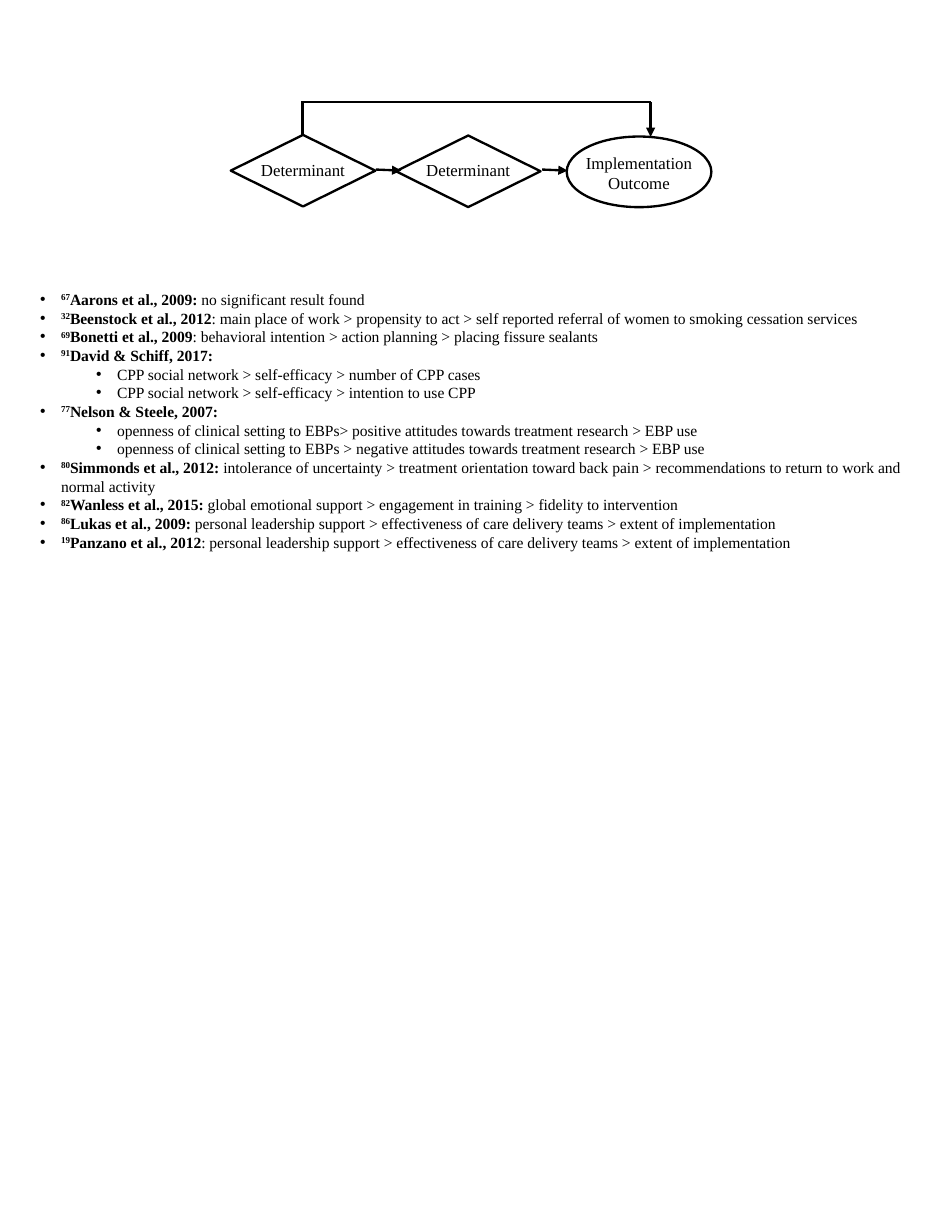
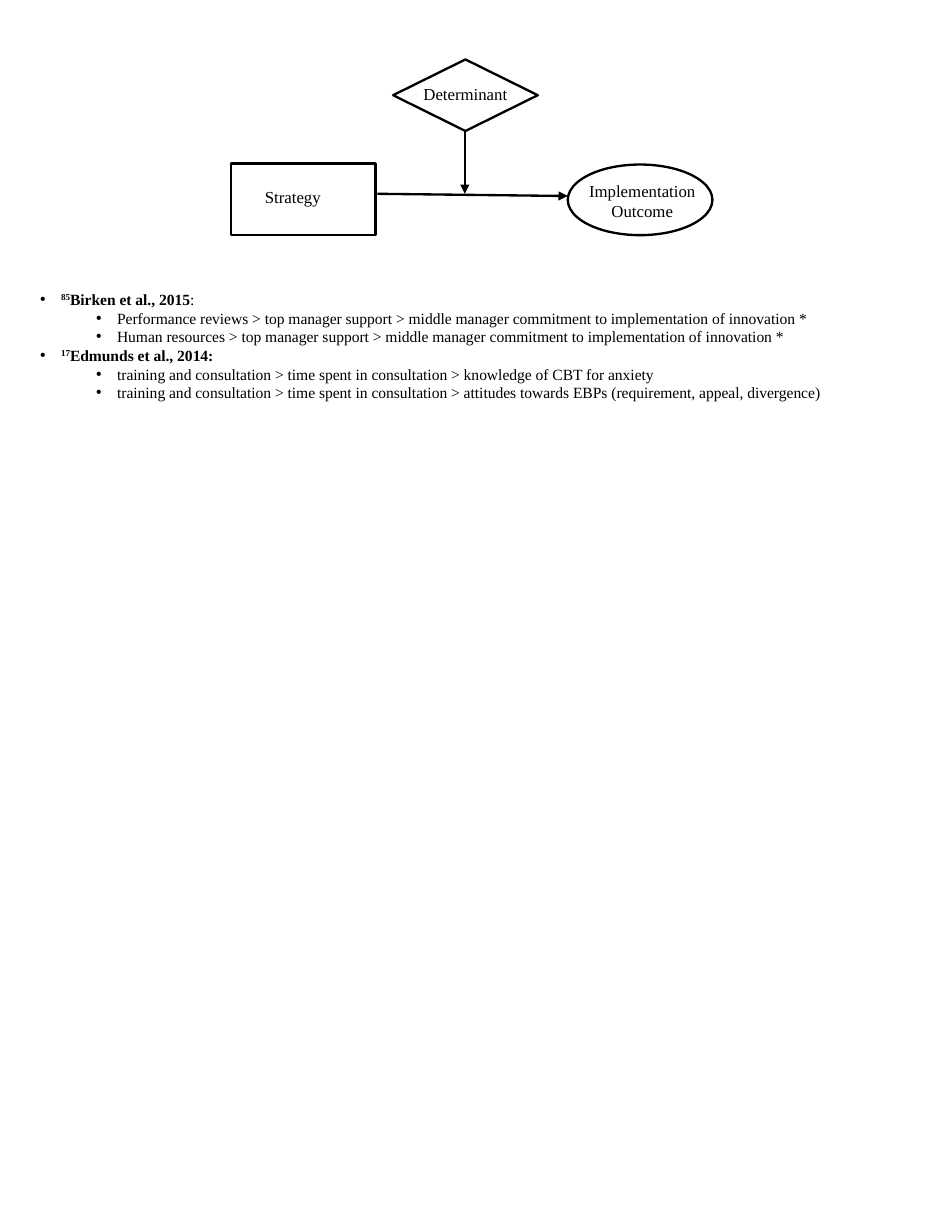
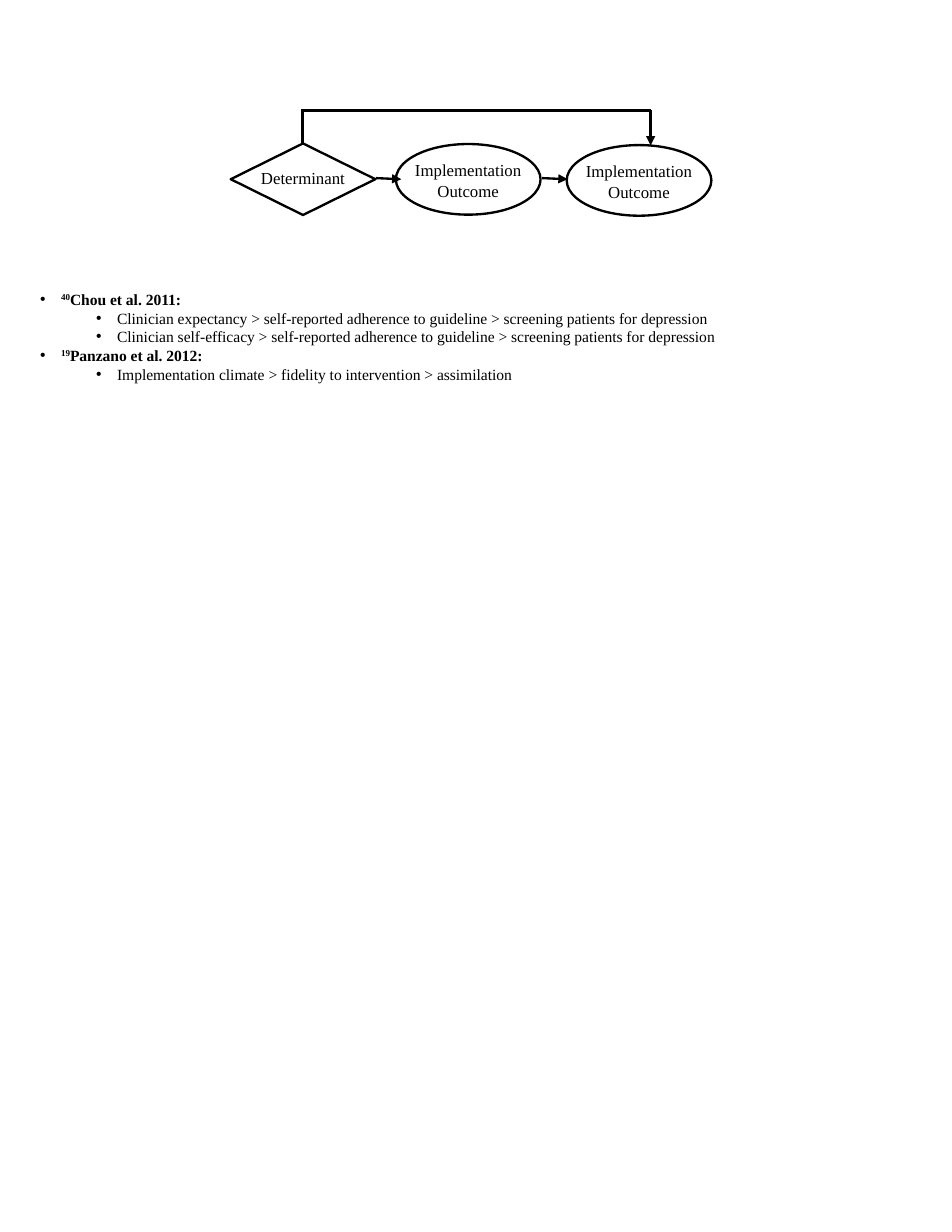
from lxml.etree import SubElement
from pptx import Presentation
from pptx.dml.color import RGBColor
from pptx.enum.shapes import MSO_CONNECTOR, MSO_SHAPE
from pptx.enum.text import MSO_AUTO_SIZE, PP_ALIGN
from pptx.oxml.ns import qn
from pptx.util import Pt

BLACK = RGBColor(0, 0, 0)
WHITE = RGBColor(255, 255, 255)
FACE = "Times New Roman"
LEFT = 148.3            # left edge of every diagram
LIST = (18.7, 182.9, 573)  # left, top, width of every study list
WIDE = 93               # width of every node

# Kind of node: shape, height, text, label width, label drop
DET = (MSO_SHAPE.DIAMOND, 46, "Determinant", 80, 12.3)
OUT = (MSO_SHAPE.OVAL, 45.4, "Implementation Outcome", 88, 6.8)
STRAT = (MSO_SHAPE.RECTANGLE, 46, "Strategy", 94, 11.5)

# Studies: reference number, bold lead, plain rest, sub-items
DETS = [
    ("67", "Aarons et al., 2009: ", "no significant result found", []),
    ("32", "Beenstock et al., 2012", ": main place of work > propensity to act > "
     "self reported referral of women to smoking cessation services", []),
    ("69", "Bonetti et al., 2009",
     ": behavioral intention > action planning > placing fissure sealants", []),
    ("91", "David & Schiff, 2017:", "", [
        "CPP social network > self-efficacy > number of CPP cases",
        "CPP social network > self-efficacy > intention to use CPP"]),
    ("77", "Nelson & Steele, 2007:", "", [
        "openness of clinical setting to EBPs> positive attitudes towards "
        "treatment research > EBP use",
        "openness of clinical setting to EBPs > negative attitudes towards "
        "treatment research > EBP use"]),
    ("80", "Simmonds et al., 2012: ", "intolerance of uncertainty > treatment "
     "orientation toward back pain > recommendations to return to work and "
     "normal activity", []),
    ("82", "Wanless et al., 2015: ", "global emotional support > engagement in "
     "training > fidelity to intervention", []),
    ("86", "Lukas et al., 2009: ", "personal leadership support > effectiveness "
     "of care delivery teams > extent of implementation", []),
    ("19", "Panzano et al., 2012", ": personal leadership support > "
     "effectiveness of care delivery teams > extent of implementation", []),
]
MODS = [
    ("85", "Birken et al., 2015", ":", [
        "Performance reviews > top manager support > middle manager commitment "
        "to implementation of innovation *",
        "Human resources > top manager support > middle manager commitment "
        "to implementation of innovation *"]),
    ("17", "Edmunds et al., 2014:", "", [
        "training and consultation > time spent in consultation > knowledge of "
        "CBT for anxiety",
        "training and consultation > time spent in consultation > attitudes "
        "towards EBPs (requirement, appeal, divergence)"]),
]
OUTS = [
    ("40", "Chou et al. 2011:", "", [
        "Clinician expectancy > self-reported adherence to guideline > "
        "screening patients for depression",
        "Clinician self-efficacy > self-reported adherence to guideline > "
        "screening patients for depression"]),
    ("19", "Panzano et al. 2012:", "", [
        "Implementation climate > fidelity to intervention > assimilation"]),
]


def style(para, size):
    font = para.font
    font.name, font.size, font.color.rgb = FACE, Pt(size), BLACK


def text_box(slide, x, y, w, h):
    frame = slide.shapes.add_textbox(Pt(x), Pt(y), Pt(w), Pt(h)).text_frame
    frame.word_wrap = True
    frame.auto_size = MSO_AUTO_SIZE.SHAPE_TO_FIT_TEXT
    return frame


def node(slide, kind, x, y, fill=False, shift=0):
    """Outlined shape with its label centred over it."""
    form, high, text, wide, drop = kind
    shape = slide.shapes.add_shape(form, Pt(x), Pt(y), Pt(WIDE), Pt(high))
    shape.shadow.inherit = False
    shape.line.color.rgb, shape.line.width = BLACK, Pt(1.5)
    if fill:
        shape.fill.solid()
        shape.fill.fore_color.rgb = WHITE
    else:
        shape.fill.background()
    frame = text_box(slide, x + (WIDE - wide) / 2 + shift, y + drop, wide, 20)
    para = frame.paragraphs[0]
    para.text, para.alignment = text, PP_ALIGN.CENTER
    style(para, 10.8)


def link(slide, x1, y1, x2, y2, arrow=True):
    line = slide.shapes.add_connector(
        MSO_CONNECTOR.STRAIGHT, Pt(x1), Pt(y1), Pt(x2), Pt(y2))
    line.line.color.rgb, line.line.width = BLACK, Pt(1.5)
    if arrow:
        SubElement(line.line._get_or_add_ln(), qn("a:tailEnd"), type="triangle")
    SubElement(line._element.spPr, qn("a:effectLst"))


def chain(slide, x, y, mid, fill):
    """Three nodes in a row, and a bypass from first to last."""
    node(slide, mid, x + 106.2, y + 21.6, fill)
    node(slide, DET, x, y + 21.2)
    node(slide, OUT, x + 216, y + 22.3)
    # Steps between neighbours
    for start in (93.3, 200.2):
        link(slide, x + start, y + 43.5, x + start + 16.4, y + 44.2)
    # Bypass
    first, last = x + 46.1, x + 270
    link(slide, first, y, first, y + 21, arrow=False)
    link(slide, last, y, first - 0.7, y, arrow=False)
    link(slide, last, y, last, y + 22.5)


def effect(slide, x, y):
    """Strategy leading to outcome, with a determinant acting on the arrow."""
    node(slide, STRAT, x, y + 67, fill=True, shift=-6.5)
    node(slide, DET, x + 104.4, y)
    node(slide, OUT, x + 216.7, y + 67.6, shift=1.4)
    link(slide, x + 94.3, y + 86.4, x + 216.7, y + 87.8)
    link(slide, x + 150.5, y + 46, x + 150.5, y + 86.4)


def bullet(frame, level, parts):
    """Bulleted paragraph; parts are (text, bold, raised)."""
    para = frame.paragraphs[0]
    if para.runs:
        para = frame.add_paragraph()
    para.level = level
    props = para._p.get_or_add_pPr()
    props.set("marL", str(Pt(13.5 + 36 * level)))
    props.set("indent", str(-Pt(13.5)))
    SubElement(props, qn("a:buFont"), typeface="Arial")
    SubElement(props, qn("a:buChar"), char="•")
    para.line_spacing = Pt(12)
    style(para, 10)
    for text, bold, raised in parts:
        if text:
            run = para.add_run()
            run.text, run.font.bold = text, bold
            if raised:
                run._r.get_or_add_rPr().set("baseline", "30000")


def studies(slide, x, y, w, items):
    rows = sum(1 + len(subs) for *_, subs in items)
    frame = text_box(slide, x, y, w, 12 * rows + 7.2)
    for ref, lead, rest, subs in items:
        bullet(frame, 0, [(ref, True, True), (lead, True, False),
                          (rest, False, False)])
        for sub in subs:
            bullet(frame, 1, [(sub, False, False)])


def main():
    deck = Presentation()
    deck.slide_width, deck.slide_height = Pt(612), Pt(792)
    pages = [
        (chain, (LEFT, 65.5, DET, True), DETS),
        (effect, (LEFT, 38.2), MODS),
        (chain, (LEFT, 71, OUT, False), OUTS),
    ]
    for draw, args, items in pages:
        slide = deck.slides.add_slide(deck.slide_layouts[6])
        draw(slide, *args)
        studies(slide, *LIST, items)
    deck.save("out.pptx")


if __name__ == "__main__":
    main()
